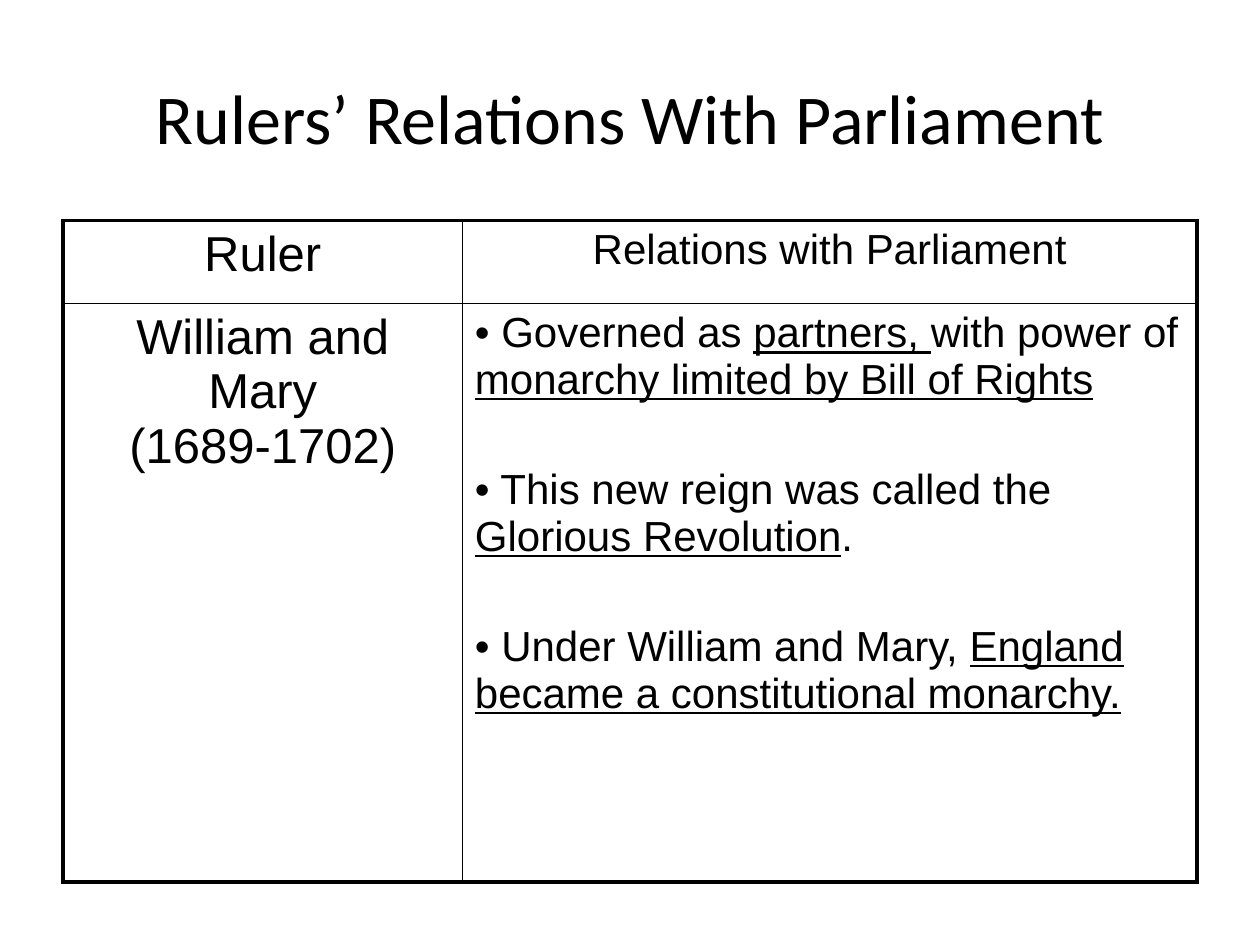
import dataclasses

import lxml.etree
import pptx
import pptx.dml.color
import pptx.enum.text
import pptx.oxml.ns
import pptx.util

Inches = pptx.util.Inches
Pt = pptx.util.Pt
ALIGN = pptx.enum.text.PP_ALIGN
qn = pptx.oxml.ns.qn


@dataclasses.dataclass(frozen=True)
class Theme:
    ink: str = "000000"
    title_font: str = "Calibri"
    body_font: str = "Arial"
    title_size: int = 40
    ruler_size: int = 28
    body_size: int = 24
    point_gap: int = 36
    outer_line: float = 2.25
    inner_line: float = 1


class SlideBuilder:
    def __init__(self, slide, theme):
        self.slide = slide
        self.theme = theme

    def add_run(self, p, text, size, font, underline=False):
        r = p.add_run()
        r.text = text
        r.font.size = Pt(size)
        r.font.name = font
        r.font.underline = underline
        r.font.color.rgb = pptx.dml.color.RGBColor.from_string(self.theme.ink)

    def add_title(self, text, left, top, width, height):
        sp = self.slide.shapes.add_textbox(
            Inches(left), Inches(top), Inches(width), Inches(height))
        tf = sp.text_frame
        tf.word_wrap = True
        tf.vertical_anchor = pptx.enum.text.MSO_ANCHOR.MIDDLE
        p = tf.paragraphs[0]
        p.alignment = ALIGN.CENTER
        self.add_run(p, text, self.theme.title_size, self.theme.title_font)

    def add_table(self, left, top, widths, heights):
        table = self.slide.shapes.add_table(
            len(heights), len(widths), Inches(left), Inches(top),
            Inches(sum(widths)), Inches(sum(heights))).table
        table.first_row = False
        table.horz_banding = False
        for column, width in zip(table.columns, widths):
            column.width = Inches(width)
        for row, height in zip(table.rows, heights):
            row.height = Inches(height)
        last_row, last_col = len(heights) - 1, len(widths) - 1
        for i in range(len(heights)):
            for j in range(len(widths)):
                cell = table.cell(i, j)
                cell.fill.background()
                self.add_borders(cell, {"lnL": j == 0, "lnR": j == last_col,
                                        "lnT": i == 0, "lnB": i == last_row})
        return table

    def add_borders(self, cell, sides):
        tc_pr = cell._tc.get_or_add_tcPr()
        for index, (side, is_outer) in enumerate(sides.items()):
            width = self.theme.outer_line if is_outer else self.theme.inner_line
            ln = lxml.etree.Element(qn("a:" + side), w=str(Pt(width)))
            fill = lxml.etree.SubElement(ln, qn("a:solidFill"))
            lxml.etree.SubElement(fill, qn("a:srgbClr"), val=self.theme.ink)
            tc_pr.insert(index, ln)

    def add_centered(self, cell, lines, size):
        p = cell.text_frame.paragraphs[0]
        p.alignment = ALIGN.CENTER
        for i, line in enumerate(lines):
            if i:
                p.add_line_break()
            self.add_run(p, line, size, self.theme.body_font)

    def add_points(self, cell, points):
        tf = cell.text_frame
        for i, runs in enumerate(points):
            p = tf.add_paragraph() if i else tf.paragraphs[0]
            p.alignment = ALIGN.LEFT
            if i:
                p.space_before = Pt(self.theme.point_gap)
            p_pr = p._p.get_or_add_pPr()
            p_pr.set("marL", "0")
            p_pr.set("indent", "0")
            lxml.etree.SubElement(p_pr, qn("a:buFont"), typeface=self.theme.body_font)
            lxml.etree.SubElement(p_pr, qn("a:buChar"), char="•")
            for text, underline in runs:
                self.add_run(p, text, self.theme.body_size,
                             self.theme.body_font, underline)


POINTS = [
    [(" Governed as ", False), ("partners, ", True), ("with power of ", False),
     ("monarchy limited by Bill of Rights", True)],
    [(" This new reign was called the ", False),
     ("Glorious Revolution", True), (".", False)],
    [(" Under William and Mary, ", False),
     ("England became a constitutional monarchy.", True)],
]


def main():
    prs = pptx.Presentation()
    prs.slide_width = Inches(10)
    prs.slide_height = Inches(7.5)
    s = prs.slides.add_slide(prs.slide_layouts[6])
    theme = Theme()
    builder = SlideBuilder(s, theme)

    builder.add_title("Rulers’ Relations With Parliament", 0.5, 0.3, 9, 1.25)
    table = builder.add_table(0.5, 1.75, [3.17, 5.83], [0.66, 4.59])
    builder.add_centered(table.cell(0, 0), ["Ruler"], theme.ruler_size)
    builder.add_centered(table.cell(0, 1), ["Relations with Parliament"],
                         theme.body_size)
    builder.add_centered(table.cell(1, 0), ["William and Mary", "(1689-1702)"],
                         theme.ruler_size)
    builder.add_points(table.cell(1, 1), POINTS)

    prs.save("out.pptx")


if __name__ == "__main__":
    main()
